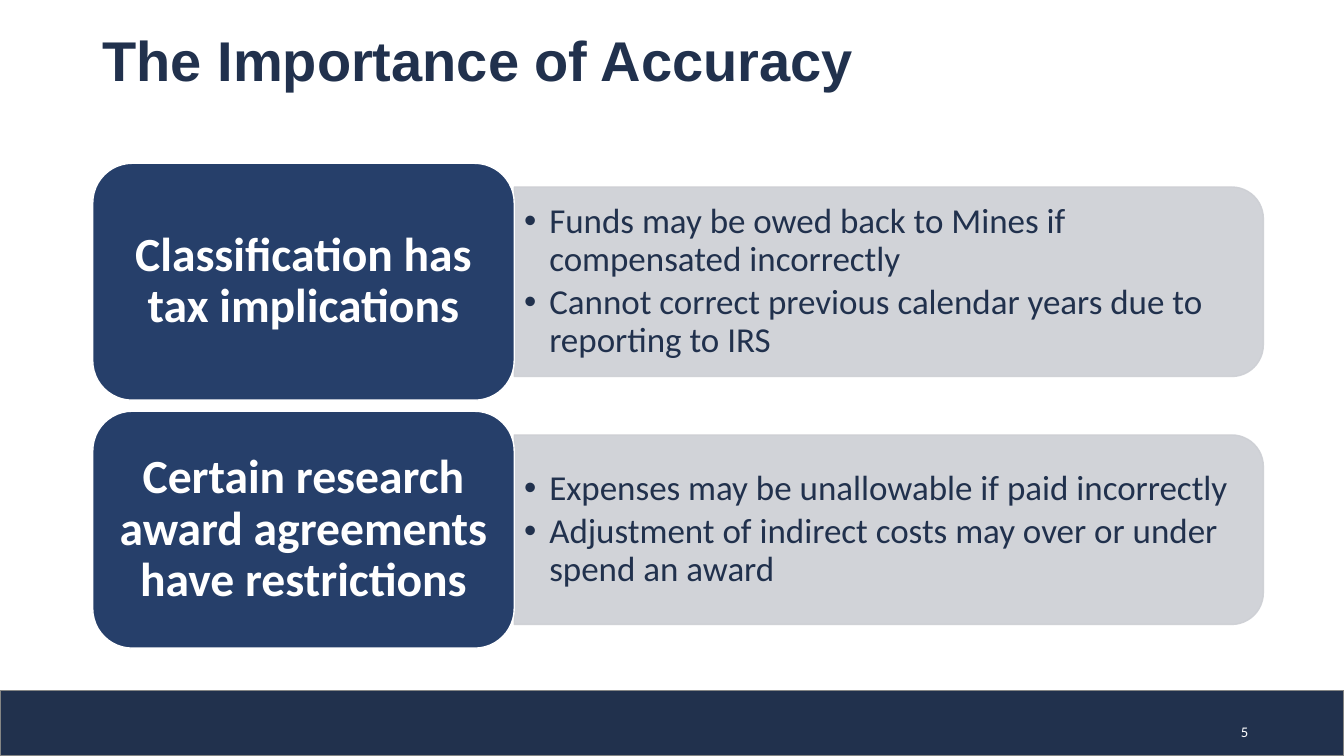
"""Build the slide on the importance of accuracy."""
from lxml import etree
from pptx import Presentation
from pptx.dml.color import RGBColor
from pptx.enum.shapes import MSO_SHAPE as SHAPE
from pptx.enum.text import MSO_ANCHOR as ANCHOR, PP_ALIGN as ALIGN
from pptx.oxml.ns import qn
from pptx.util import Inches, Pt

TITLE = "The Importance of Accuracy"
PAGE = "5"
ROWS = [
    ("Classification has tax implications",
     ["Funds may be owed back to Mines if compensated incorrectly",
      "Cannot correct previous calendar years due to reporting to IRS"]),
    ("Certain research award agreements have restrictions",
     ["Expenses may be unallowable if paid incorrectly",
      "Adjustment of indirect costs may over or under spend an award"]),
]

NAVY = RGBColor(0x21, 0x31, 0x4D)
BLUE = RGBColor(0x26, 0x3F, 0x6A)
SILVER = RGBColor(0xCD, 0xCF, 0xD4)
GRAY = RGBColor(0x84, 0x85, 0x84)
WHITE = RGBColor(0xFF, 0xFF, 0xFF)

WIDTH, HEIGHT = 13.33, 7.5
LEFT, TOP = 0.92, 1.62
LABEL_W, LABEL_H, ROW_GAP = 4.18, 2.35, 0.11
PANEL_W, PANEL_H = 7.43, 0.8 * LABEL_H
DETAIL_W, DETAIL_H = 7.33, 1.7
FOOTER_H = 0.65


def add_shape(slide, kind, box, fill, line, opacity=None, rotation=0):
    s = slide.shapes.add_shape(kind, *map(Inches, box))
    s.shadow.inherit = False
    s.rotation = rotation
    s.fill.solid()
    s.fill.fore_color.rgb = fill
    s.line.color.rgb = line
    s.line.width = Pt(1)
    if opacity:
        for color in s._element.spPr.iter(qn("a:srgbClr")):
            etree.SubElement(color, qn("a:alpha"), val=str(opacity * 1000))
    return s


def add_box(slide, box):
    return slide.shapes.add_textbox(*map(Inches, box))


def write(s, text, size, color, font="Calibri", bold=False, align=ALIGN.LEFT,
          anchor=ANCHOR.MIDDLE, inset=(0.1, 0.05), bullet=None, after=0):
    tf = s.text_frame
    tf.word_wrap = True
    tf.vertical_anchor = anchor
    tf.margin_left = tf.margin_right = Inches(inset[0])
    tf.margin_top = tf.margin_bottom = Inches(inset[1])
    for i, line in enumerate([text] if isinstance(text, str) else text):
        p = tf.add_paragraph() if i else tf.paragraphs[0]
        p.alignment = align
        p.line_spacing = 0.9
        p.space_after = Pt(after)
        if bullet:
            pPr = p._p.get_or_add_pPr()
            pPr.set("marL", str(Inches(0.25)))
            pPr.set("indent", str(-Inches(0.25)))
            etree.SubElement(pPr, qn("a:buFont"), typeface="Arial")
            etree.SubElement(pPr, qn("a:buChar"), char=bullet)
        r = p.add_run()
        r.text = line
        r.font.name, r.font.size, r.font.bold = font, Pt(size), bold
        r.font.color.rgb = color


def add_row(slide, index, label, details):
    top = TOP + index * (LABEL_H + ROW_GAP)
    middle = top + LABEL_H / 2
    split = LEFT + LABEL_W
    panel = (split + (PANEL_W - PANEL_H) / 2, middle - PANEL_W / 2,
             PANEL_H, PANEL_W)
    add_shape(slide, SHAPE.ROUND_2_SAME_RECTANGLE, panel, SILVER, SILVER,
              opacity=90, rotation=90)
    write(add_box(slide, (split, middle - DETAIL_H / 2, DETAIL_W, DETAIL_H)),
          details, 25, NAVY, bullet="•", after=4)
    s = add_shape(slide, SHAPE.ROUNDED_RECTANGLE,
                  (LEFT, top, LABEL_W, LABEL_H), BLUE, WHITE)
    write(s, label, 34, WHITE, bold=True, align=ALIGN.CENTER,
          inset=(0.14, 0.07))


def main():
    prs = Presentation()
    prs.slide_width, prs.slide_height = Inches(WIDTH), Inches(HEIGHT)
    slide = prs.slides.add_slide(prs.slide_layouts[6])
    add_shape(slide, SHAPE.RECTANGLE,
              (0, HEIGHT - FOOTER_H, WIDTH, FOOTER_H), NAVY, GRAY)
    write(add_box(slide, (9.48, 7.13, 3, 0.27)), PAGE, 10.5, WHITE,
          align=ALIGN.RIGHT)
    write(add_box(slide, (LEFT, 0.23, 11.5, 0.8)), TITLE, 40, NAVY,
          font="Arial", bold=True)
    for index, (label, details) in enumerate(ROWS):
        add_row(slide, index, label, details)
    prs.save("out.pptx")


if __name__ == "__main__":
    main()
